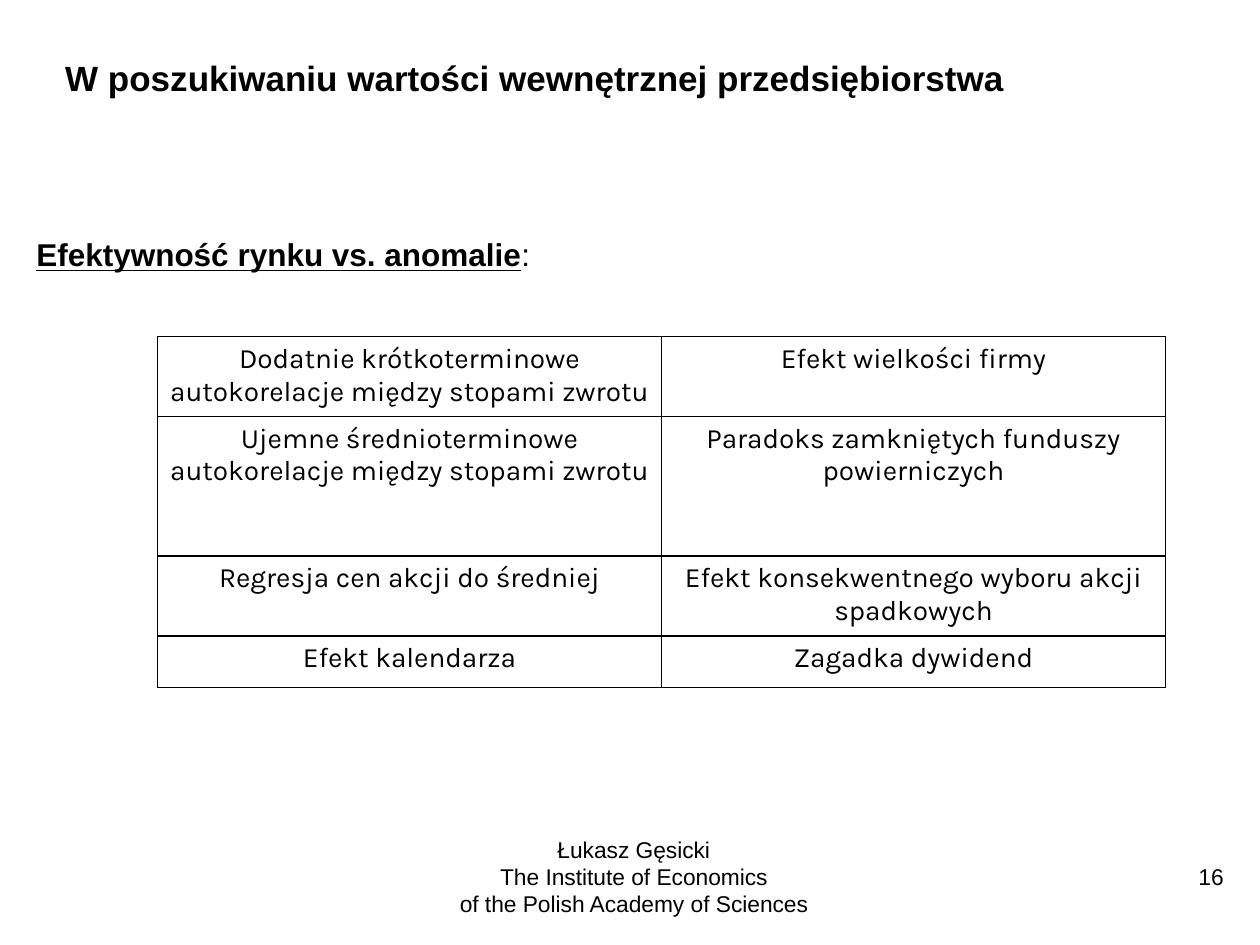
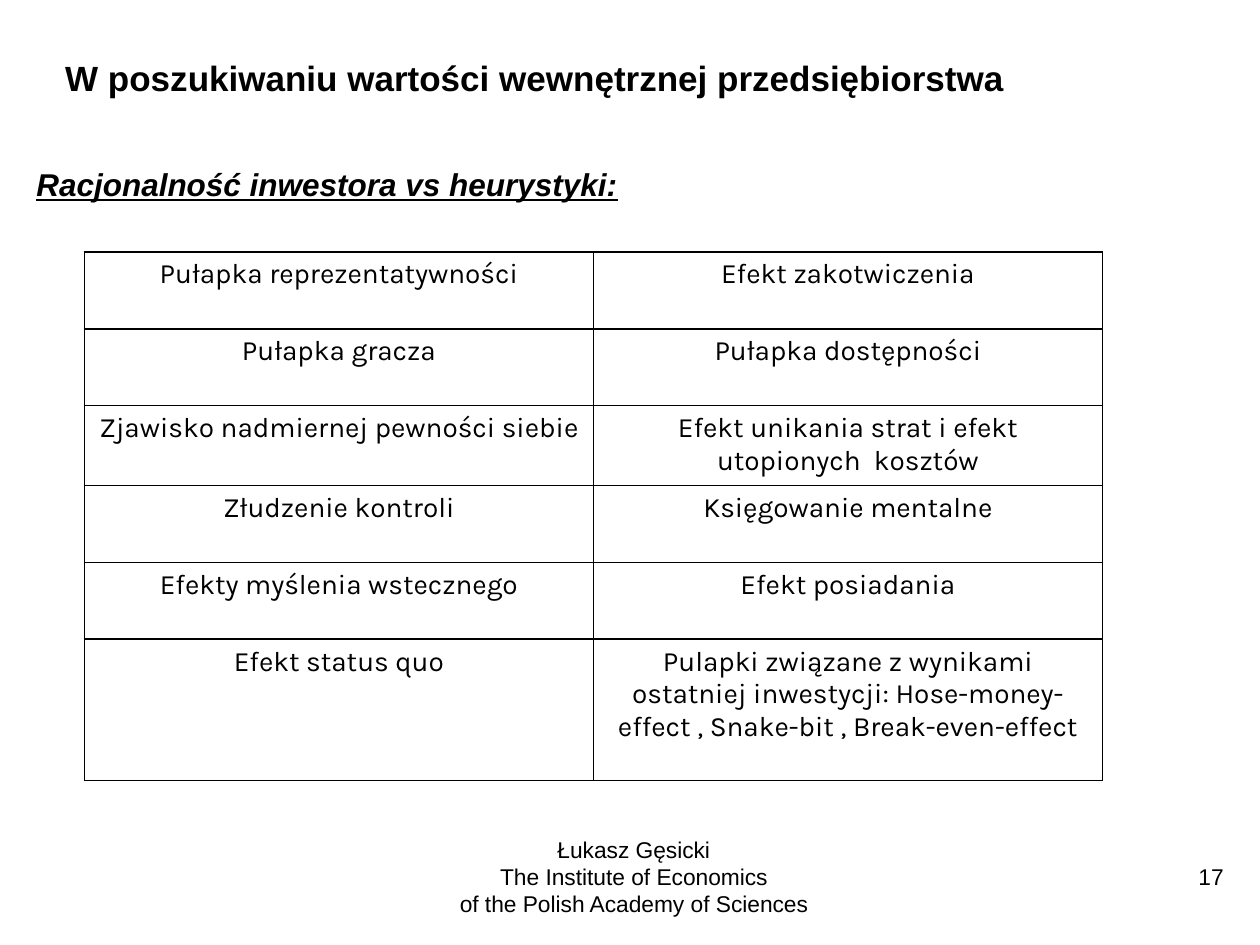
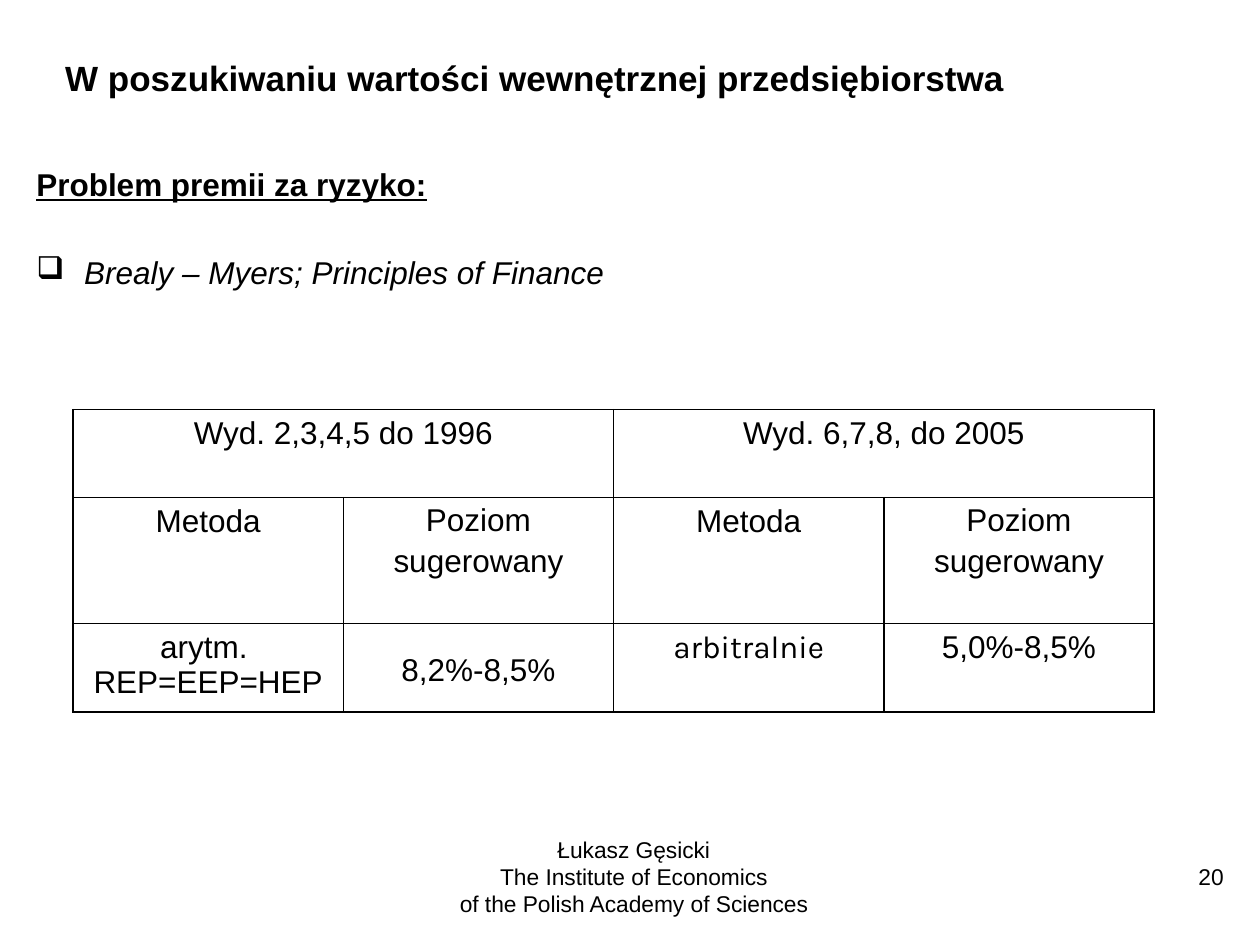
from lxml.etree import SubElement
from pptx import Presentation
from pptx.dml.color import RGBColor
from pptx.enum.text import MSO_ANCHOR as Anchor, PP_ALIGN as Align
from pptx.oxml import parse_xml
from pptx.oxml.ns import nsdecls, qn
from pptx.util import Inches, Pt

COLORS = {"text": "000000", "border": "000000", "background": "FFFFFF"}
BODY_FONT, TABLE_FONT = "Arial", "Karla"
TITLE = "W poszukiwaniu wartości wewnętrznej przedsiębiorstwa"
FOOTER = ["Łukasz Gęsicki", "The Institute of Economics",
          "of the Polish Academy of Sciences"]
TITLE_BOX = (0.23, 0.15, 8.03, 0.93)
FOOTER_BOX = (3.45, 6.58, 3.16, 0.75)
NUMBER_BOX = (7.73, 6.8, 2.08, 0.5)
BORDER_WIDTH = 1


def write(paragraph, text, size=18, font=BODY_FONT, bold=False, italic=False,
          underline=False, align=Align.LEFT, line_spacing=None,
          space_before=0, space_after=0):
    paragraph.alignment = align
    paragraph.line_spacing = line_spacing
    paragraph.space_before = Pt(space_before)
    paragraph.space_after = Pt(space_after)
    run = paragraph.add_run()
    run.text = text
    run.font.size = Pt(size)
    run.font.name = font
    run.font.bold = bold
    run.font.italic = italic
    run.font.underline = underline
    run.font.color.rgb = RGBColor.from_string(COLORS["text"])


def add_frame(slide, box, anchor=Anchor.TOP):
    frame = slide.shapes.add_textbox(*map(Inches, box)).text_frame
    frame.word_wrap = True
    frame.vertical_anchor = anchor
    return frame


def add_bullet(paragraph, symbol, indent):
    properties = paragraph._p.get_or_add_pPr()
    properties.set("marL", str(Inches(indent)))
    properties.set("indent", str(-Inches(indent)))
    SubElement(properties, qn("a:buChar")).set("char", symbol)


def add_borders(cell):
    cell.fill.background()
    properties = cell._tc.get_or_add_tcPr()
    for index, side in enumerate(("lnL", "lnR", "lnT", "lnB")):
        properties.insert(index, parse_xml(
            f'<a:{side} {nsdecls("a")} w="{Pt(BORDER_WIDTH)}"><a:solidFill>'
            f'<a:srgbClr val="{COLORS["border"]}"/></a:solidFill></a:{side}>'))


def add_table(slide, box, row_heights, rows, **text_format):
    """Each cell is a string, a (text, options) pair, or None to extend the cell on its left."""
    column_count = len(rows[0])
    table = slide.shapes.add_table(len(rows), column_count, *map(Inches, box)).table
    table.first_row = table.horz_banding = False
    for column in table.columns:
        column.width = Inches(box[2] / column_count)
    for row, height in zip(table.rows, row_heights):
        row.height = Inches(height)
    for row_index, row in enumerate(rows):
        for column_index, content in enumerate(row):
            cell = table.cell(row_index, column_index)
            add_borders(cell)
            if content is None:
                table.cell(row_index, column_index - 1).merge(cell)
                continue
            text, options = (content, {}) if isinstance(content, str) else content
            options = dict(options)
            cell.vertical_anchor = options.pop("anchor", Anchor.TOP)
            side, edge = options.pop("margins", (0.1, 0.05))
            cell.margin_left = cell.margin_right = Inches(side)
            cell.margin_top = cell.margin_bottom = Inches(edge)
            write(cell.text_frame.paragraphs[0], text,
                  **{"align": Align.CENTER, **text_format, **options})


def add_base_slide(presentation, number):
    """Blank slide with the shared title, footer and page number."""
    slide = presentation.slides.add_slide(presentation.slide_layouts[6])
    slide.background.fill.solid()
    slide.background.fill.fore_color.rgb = RGBColor.from_string(COLORS["background"])
    title = add_frame(slide, TITLE_BOX, Anchor.MIDDLE)
    write(title.paragraphs[0], TITLE, size=20, bold=True, align=Align.CENTER)
    footer = add_frame(slide, FOOTER_BOX)
    for index, line in enumerate(FOOTER):
        paragraph = footer.add_paragraph() if index else footer.paragraphs[0]
        write(paragraph, line, size=13, align=Align.CENTER)
    page = add_frame(slide, NUMBER_BOX)
    write(page.paragraphs[0], str(number), size=13, align=Align.RIGHT)
    return slide


def add_heading(slide, box, text, **text_format):
    frame = add_frame(slide, box)
    write(frame.paragraphs[0], text, bold=True, underline=True, **text_format)
    return frame


def build_anomalies(presentation):
    slide = add_base_slide(presentation, 16)
    heading = add_heading(slide, (0.19, 1.82, 9.61, 0.5), "Efektywność rynku vs. anomalie")
    write(heading.paragraphs[0], ":")
    add_table(slide, (1.25, 2.67, 8, 2.76), [0.62, 1.11, 0.62, 0.41], [
        ["Dodatnie krótkoterminowe autokorelacje między stopami zwrotu",
         "Efekt wielkości firmy"],
        ["Ujemne średnioterminowe autokorelacje między stopami zwrotu",
         "Paradoks zamkniętych funduszy powierniczych"],
        ["Regresja cen akcji do średniej",
         "Efekt konsekwentnego wyboru akcji spadkowych"],
        ["Efekt kalendarza", "Zagadka dywidend"],
    ], size=16, font=TABLE_FONT)


def build_heuristics(presentation):
    slide = add_base_slide(presentation, 17)
    add_heading(slide, (0.19, 1.26, 9.61, 0.5),
                "Racjonalność inwestora vs heurystyki:", italic=True)
    add_table(slide, (0.67, 2, 8.08, 4.18), [0.61, 0.61, 0.62, 0.61, 0.61, 1.12], [
        ["Pułapka reprezentatywności", "Efekt zakotwiczenia"],
        ["Pułapka gracza", "Pułapka dostępności"],
        ["Zjawisko nadmiernej pewności siebie",
         "Efekt unikania strat i efekt utopionych  kosztów"],
        ["Złudzenie kontroli", "Księgowanie mentalne"],
        ["Efekty myślenia wstecznego", "Efekt posiadania"],
        ["Efekt status quo",
         "Pulapki związane z wynikami ostatniej inwestycji: "
         "Hose-money-effect , Snake-bit , Break-even-effect"],
    ], size=16, font=TABLE_FONT)


def build_risk_premium(presentation):
    slide = add_base_slide(presentation, 20)
    body = add_heading(slide, (0.19, 1.26, 9.61, 1.5), "Problem premii za ryzyko:")
    reference = body.add_paragraph()
    add_bullet(reference, "❑", 0.38)
    write(reference, "Brealy – Myers; Principles of Finance", italic=True, space_before=29)

    level = ("Poziom sugerowany",
             {"margins": (0.1, 0), "line_spacing": 1.15, "space_after": 10})
    premium = ("8,2%-8,5%",
               {"margins": (0.07, 0), "line_spacing": 1.15, "anchor": Anchor.MIDDLE})
    add_table(slide, (0.58, 3.25, 8.58, 2.36), [0.7, 1, 0.66], [
        ["Wyd. 2,3,4,5 do 1996", None, "Wyd. 6,7,8, do 2005", None],
        ["Metoda", level, "Metoda", level],
        ["arytm.  REP=EEP=HEP", premium,
         ("arbitralnie", {"font": TABLE_FONT}), "5,0%-8,5%"],
    ])


def main():
    presentation = Presentation()
    presentation.slide_width, presentation.slide_height = Inches(10), Inches(7.5)
    build_anomalies(presentation)
    build_heuristics(presentation)
    build_risk_premium(presentation)
    presentation.save("out.pptx")


if __name__ == "__main__":
    main()
